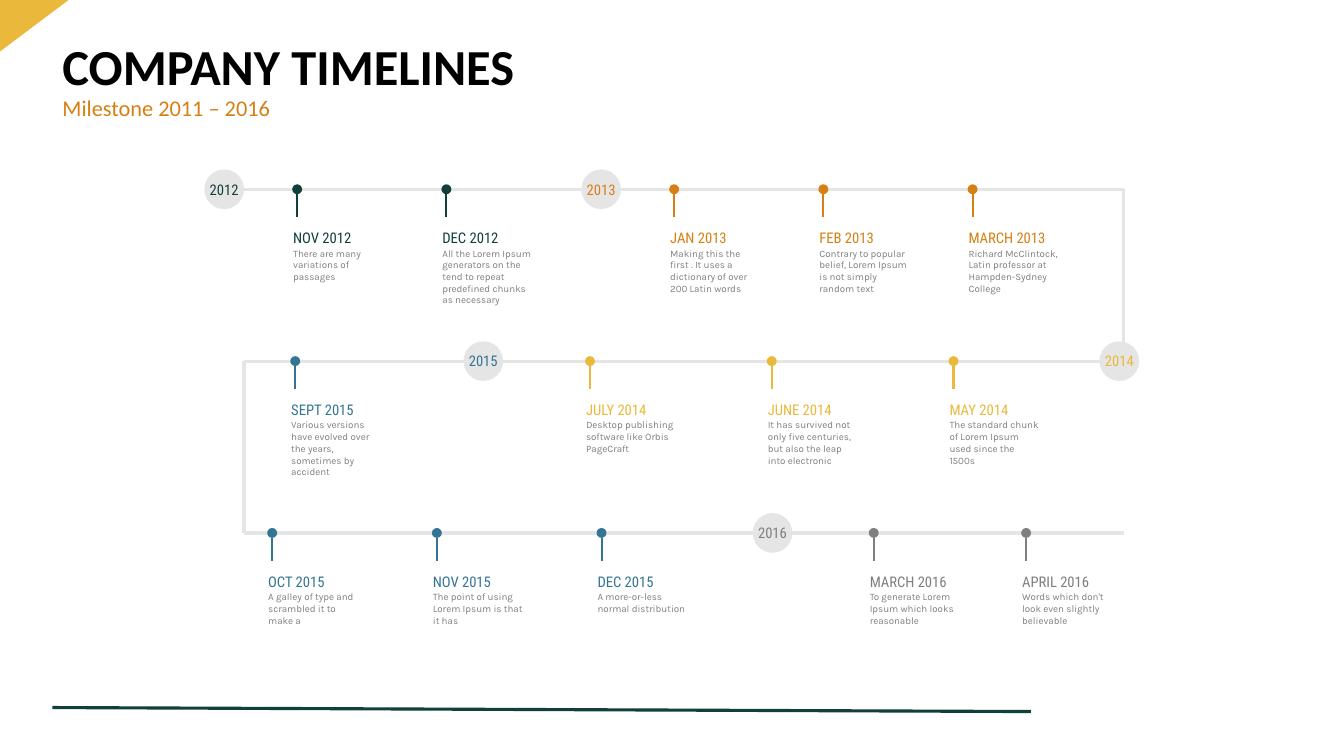
from dataclasses import dataclass

from lxml import etree
from pptx import Presentation
from pptx import util as u
from pptx.dml.color import RGBColor
from pptx.enum import shapes, text
from pptx.oxml import ns


@dataclass(frozen=True)
class Theme:
    black: str = "000000"
    green: str = "11403A"
    orange: str = "D68013"
    yellow: str = "EAB83B"
    blue: str = "347593"
    grey: str = "7F7F7F"
    rail: str = "E5E5E5"
    heading_font: str = "Calibri"
    date_font: str = "Roboto Condensed"
    story_font: str = "Karla"
    title_size: float = 36
    subtitle_size: float = 16
    date_size: float = 10.5
    story_size: float = 7
    rail_width: float = 2.25
    stem_width: float = 1.5


theme = Theme()
prs = Presentation()
prs.slide_width, prs.slide_height = u.Cm(33.87), u.Cm(19.05)
slide = prs.slides.add_slide(prs.slide_layouts[2])


def draw_line(start, end, color, width):
    line = slide.shapes.add_connector(
        shapes.MSO_CONNECTOR.STRAIGHT, *[u.Cm(v) for v in (*start, *end)])
    line.line.color.rgb = RGBColor.from_string(color)
    line.line.width = u.Pt(width)
    etree.SubElement(line._element.spPr, ns.qn("a:effectLst"))


def write(frame, words, font, size, color, align=text.PP_ALIGN.LEFT, bold=False):
    frame.text = words
    for paragraph in frame.paragraphs:
        paragraph.alignment = align
        paragraph.space_before = u.Pt(0)
        for run in paragraph.runs:
            run.font.name = font
            run.font.size = u.Pt(size)
            run.font.bold = bold
            run.font.color.rgb = RGBColor.from_string(color)


draw_line((1.32, 17.83), (25.98, 17.93), theme.green, theme.rail_width)

corner = slide.shapes.add_shape(
    shapes.MSO_SHAPE.RIGHT_TRIANGLE, 0, 0, u.Cm(1.73), u.Cm(1.3))
corner._element.spPr.xfrm.set("flipV", "1")
corner.shadow.inherit = False
corner.fill.solid()
corner.fill.fore_color.rgb = RGBColor.from_string(theme.yellow)
corner.line.fill.background()

headings = [
    (slide.shapes.title, 0.99, 1.52, "COMPANY TIMELINES",
     theme.title_size, theme.black, True),
    (slide.placeholders[1], 2.26, 0.99, "Milestone 2011 – 2016",
     theme.subtitle_size, theme.orange, False),
]
for heading, top, height, words, size, color, bold in headings:
    heading.left, heading.top = u.Cm(1.32), u.Cm(top)
    heading.width, heading.height = u.Cm(31.22), u.Cm(height)
    heading.text_frame.auto_size = text.MSO_AUTO_SIZE.NONE
    heading.text_frame.vertical_anchor = text.MSO_ANCHOR.MIDDLE
    write(heading.text_frame, words, theme.heading_font, size, color, bold=bold)
    heading.text_frame.paragraphs[0].line_spacing = 0.9

rows = [4.77 + 4.33 * row for row in range(3)]
rail_left, rail_right = 6.15, 28.32
bends = [(rail_left, rows[0]), (rail_right, rows[0]), (rail_right, rows[1]),
         (rail_left, rows[1]), (rail_left, rows[2]), (rail_right, rows[2])]
for start, end in zip(bends, bends[1:]):
    draw_line(start, end, theme.rail, theme.rail_width)

years = [
    ("2012", 5.65, rows[0], theme.green),
    ("2013", 15.15, rows[0], theme.orange),
    ("2014", 28.21, rows[1], theme.yellow),
    ("2015", 12.18, rows[1], theme.blue),
    ("2016", 19.47, rows[2], theme.grey),
]
badge_size = 1.0
for year, center, level, color in years:
    badge = slide.shapes.add_shape(
        shapes.MSO_SHAPE.OVAL, u.Cm(center - badge_size / 2),
        u.Cm(level - badge_size / 2), u.Cm(badge_size), u.Cm(badge_size))
    badge.shadow.inherit = False
    badge.fill.solid()
    badge.fill.fore_color.rgb = RGBColor.from_string(theme.rail)
    badge.line.fill.background()
    badge.text_frame.word_wrap = False
    badge.text_frame.vertical_anchor = text.MSO_ANCHOR.MIDDLE
    write(badge.text_frame, year, theme.date_font, theme.date_size, color,
          text.PP_ALIGN.CENTER)

milestones = [
    (rows[0], 7.49, 3.76, theme.green, [
        ("NOV 2012", "There are many variations of passages"),
        ("DEC 2012", "All the Lorem Ipsum generators on the tend to repeat "
                     "predefined chunks as necessary")]),
    (rows[0], 16.99, 3.76, theme.orange, [
        ("JAN 2013", "Making this the first . It uses a dictionary of over\v"
                     "200 Latin words"),
        ("FEB 2013", "Contrary to popular belief, Lorem Ipsum is not simply "
                     "random text"),
        ("MARCH 2013", "Richard McClintock, Latin professor at "
                       "Hampden-Sydney College")]),
    (rows[1], 24.03, -4.58, theme.yellow, [
        ("MAY 2014", "The standard chunk of Lorem Ipsum used since the 1500s"),
        ("JUNE 2014", "It has survived not only five centuries, but also the "
                      "leap into electronic"),
        ("JULY 2014", "Desktop publishing software like Orbis PageCraft")]),
    (rows[1], 7.44, 0, theme.blue, [
        ("SEPT 2015", "Various versions have evolved over the years, "
                      "sometimes by accident")]),
    (rows[2], 6.86, 4.15, theme.blue, [
        ("OCT 2015", "A galley of type and scrambled it to make a"),
        ("NOV 2015", "The point of using Lorem Ipsum is that it has"),
        ("DEC 2015", "A more-or-less normal distribution")]),
    (rows[2], 22.02, 3.84, theme.grey, [
        ("MARCH 2016", "To generate Lorem Ipsum which looks reasonable"),
        ("APRIL 2016", "Words which don't look even slightly believable")]),
]
dot_size = 0.25
for level, first, pitch, color, events in milestones:
    for index, (date, story) in enumerate(events):
        center = first + index * pitch
        dot = slide.shapes.add_shape(
            shapes.MSO_SHAPE.OVAL, u.Cm(center - dot_size / 2),
            u.Cm(level - dot_size / 2), u.Cm(dot_size), u.Cm(dot_size))
        dot.shadow.inherit = False
        dot.fill.solid()
        dot.fill.fore_color.rgb = RGBColor.from_string(color)
        dot.line.fill.background()
        draw_line((center, level + dot_size / 2), (center, level + 0.7),
                  color, theme.stem_width)

        labels = [
            (story, 1.33, 0.95, 0.13, theme.story_font, theme.story_size, theme.grey),
            (date, 0.7, 0.74, 0.3, theme.date_font, theme.date_size, color),
        ]
        for words, drop, height, inset, font, size, ink in labels:
            label = slide.shapes.add_textbox(
                u.Cm(center - 0.35), u.Cm(level + drop), u.Cm(2.77), u.Cm(height))
            label.text_frame.word_wrap = True
            label.text_frame.auto_size = text.MSO_AUTO_SIZE.SHAPE_TO_FIT_TEXT
            label.text_frame.margin_top = u.Cm(inset)
            write(label.text_frame, words, font, size, ink)

prs.save("out.pptx")
